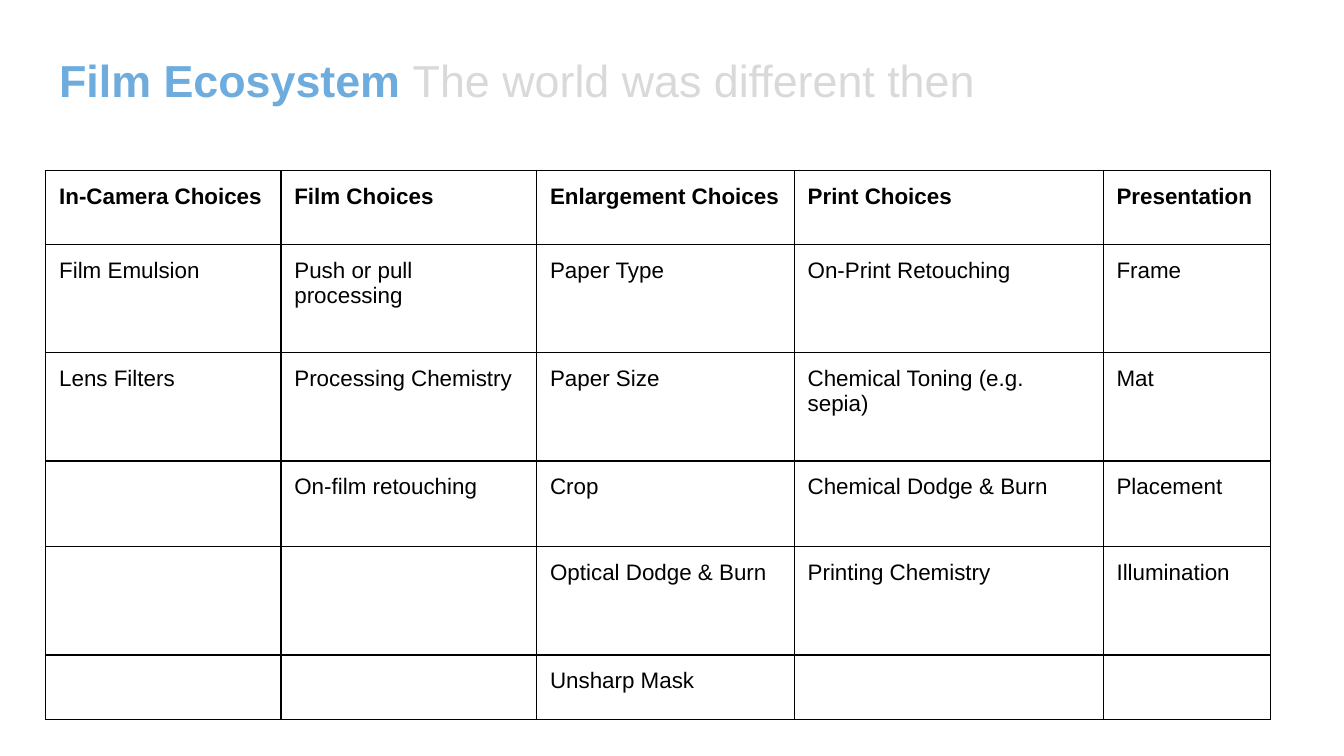
from dataclasses import dataclass

from lxml import etree
from pptx import Presentation
from pptx.dml.color import RGBColor
from pptx.enum.text import MSO_ANCHOR, MSO_AUTO_SIZE, PP_ALIGN
from pptx.oxml.ns import qn
from pptx.util import Pt

BOTTOM = MSO_ANCHOR.BOTTOM
NO_AUTOFIT = MSO_AUTO_SIZE.NONE
LEFT = PP_ALIGN.LEFT


@dataclass(frozen=True)
class Theme:
    font: str = "Arial"
    title_size: float = 24
    cell_size: float = 12
    accent: str = "6FACDE"
    muted: str = "D9D9D9"
    ink: str = "000000"
    border_width: float = 0.75
    inset: float = 7.2


THEME = Theme()
INSETS = {f"margin_{side}": Pt(THEME.inset)
          for side in ("left", "top", "right", "bottom")}

COLUMN_WIDTHS = (126, 137, 138, 165.5, 89.5)
ROW_HEIGHTS = (39.5, 58, 58, 46, 58, 34.5)
CHOICES = (
    ("In-Camera Choices", "Film Choices", "Enlargement Choices",
     "Print Choices", "Presentation"),
    ("Film Emulsion", "Push or pull processing", "Paper Type",
     "On-Print Retouching", "Frame"),
    ("Lens Filters", "Processing Chemistry", "Paper Size",
     "Chemical Toning (e.g. sepia)", "Mat"),
    ("", "On-film retouching", "Crop", "Chemical Dodge & Burn", "Placement"),
    ("", "", "Optical Dodge & Burn", "Printing Chemistry", "Illumination"),
    ("", "", "Unsharp Mask", "", ""),
)


def apply(target, formats):
    for name, value in formats.items():
        setattr(target, name, value)


def add_run(paragraph, text, size, color, bold):
    run = paragraph.add_run()
    run.text = text
    apply(run.font, {"name": THEME.font, "size": Pt(size), "bold": bold})
    run.font.color.rgb = RGBColor.from_string(color)


def fill_title(title):
    apply(title, {"left": Pt(24.5), "top": Pt(19.5),
                  "width": Pt(656), "height": Pt(44.6)})
    frame = title.text_frame
    apply(frame, {**INSETS, "vertical_anchor": BOTTOM,
                  "auto_size": NO_AUTOFIT, "word_wrap": True})
    heading = frame.paragraphs[0]
    heading.alignment = LEFT
    add_run(heading, "Film Ecosystem ", THEME.title_size, THEME.accent, True)
    add_run(heading, "The world was different then",
            THEME.title_size, THEME.muted, False)


def outline_cell(cell):
    properties = cell._tc.get_or_add_tcPr()
    for side in ("lnL", "lnR", "lnT", "lnB"):
        line = etree.SubElement(properties, qn(f"a:{side}"),
                                w=str(Pt(THEME.border_width)))
        fill = etree.SubElement(line, qn("a:solidFill"))
        etree.SubElement(fill, qn("a:srgbClr"), val=THEME.ink)


def fill_cell(cell, label, bold):
    outline_cell(cell)
    cell.fill.background()
    if label:
        apply(cell, INSETS)
        add_run(cell.text_frame.paragraphs[0], label,
                THEME.cell_size, THEME.ink, bold)


def add_choices_table(slide):
    table = slide.shapes.add_table(
        len(ROW_HEIGHTS), len(COLUMN_WIDTHS), Pt(24.5), Pt(91.5),
        Pt(sum(COLUMN_WIDTHS)), Pt(sum(ROW_HEIGHTS))).table
    apply(table, {"first_row": False, "horz_banding": False})
    for column, width in zip(table.columns, COLUMN_WIDTHS):
        column.width = Pt(width)
    for row, height in zip(table.rows, ROW_HEIGHTS):
        row.height = Pt(height)
    for r, labels in enumerate(CHOICES):
        for c, label in enumerate(labels):
            fill_cell(table.cell(r, c), label, bold=r == 0)


def main():
    presentation = Presentation()
    apply(presentation, {"slide_width": Pt(720), "slide_height": Pt(405)})
    slide = presentation.slides.add_slide(presentation.slide_layouts[0])
    subtitle = slide.placeholders[1].element
    subtitle.getparent().remove(subtitle)
    fill_title(slide.shapes.title)
    add_choices_table(slide)
    presentation.save("out.pptx")


if __name__ == "__main__":
    main()
